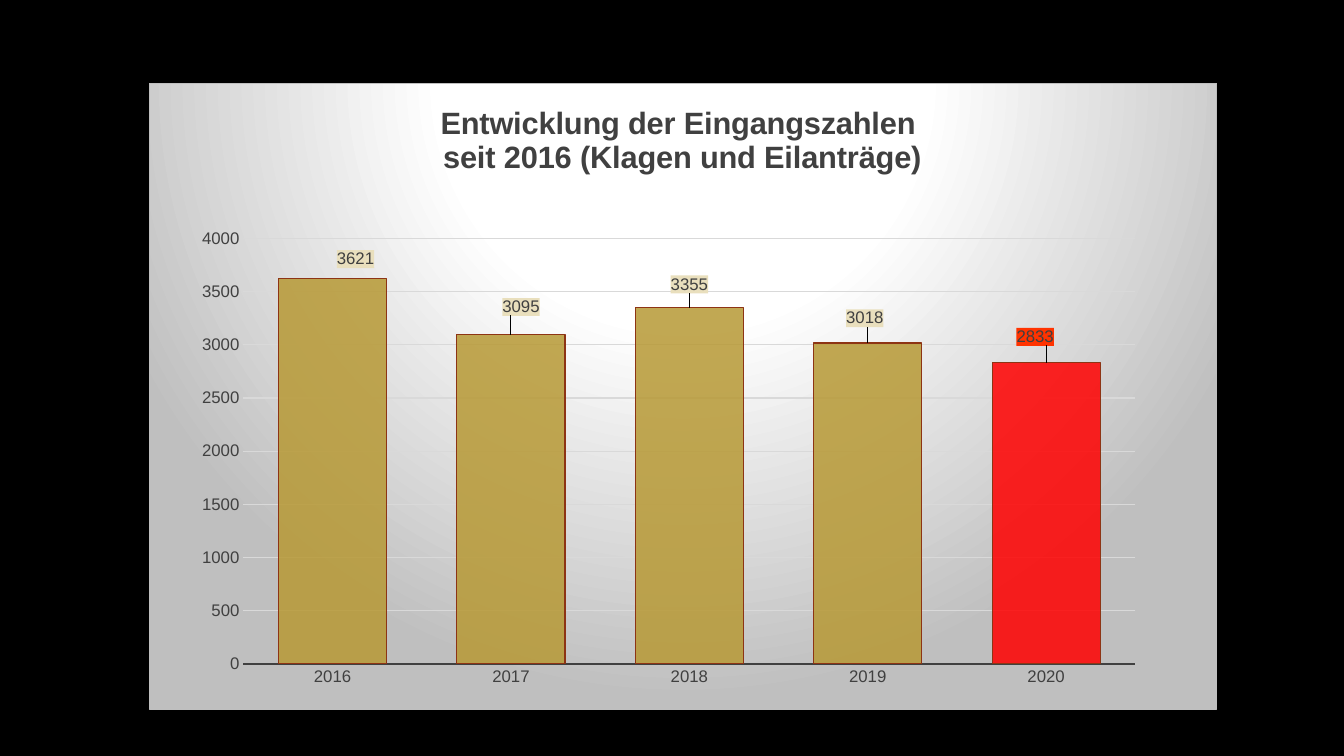
from lxml import etree
from pptx import Presentation
from pptx import util as u
from pptx.chart.data import CategoryChartData
from pptx.dml.color import RGBColor
from pptx.enum import chart as kinds
from pptx.oxml import parse_xml
from pptx.oxml.ns import nsdecls, qn

TITLE = ["Entwicklung der Eingangszahlen ", "seit 2016 (Klagen und Eilanträge)"]
YEARS = ["2016", "2017", "2018", "2019", "2020"]
CASES = [3621, 3095, 3355, 3018, 2833]
LABEL_SHIFTS = [(23, -7), (10, -15), (0, -10), (-3, -12), (-11, -13)]  # px
GOLD, RED, BROWN, DARK = "B79935", "FF0000", "8D3414", "404040"
LABEL_FILLS = ["E9DFBD"] * 4 + ["FF3300"]
GRADIENT = [(0, "FFFFFF"), (39, "FFFFFF"), (100, "BFBFBF")]
LEFT, TOP, WIDTH, HEIGHT = 149, 83, 1068, 627
FONT = "Arial"


def px(length):
    return u.Emu(round(length * 914400 / 100.8))


def colour(value):
    return RGBColor.from_string(value)


def style_font(font, size, value, bold=False):
    font.name, font.size, font.bold = FONT, u.Pt(size), bold
    font.color.rgb = colour(value)


def style_line(line, value, width):
    line.color.rgb = colour(value)
    line.width = u.Pt(width)


def style_bar(bar, value):
    bar.format.fill.solid()
    bar.format.fill.fore_color.rgb = colour(value)
    style_line(bar.format.line, BROWN, 0.75)


def layout(inner=False, **parts):
    root = parse_xml(f"<c:layout {nsdecls('c')}><c:manualLayout/></c:layout>")

    def add(name, value):
        etree.SubElement(root[0], qn("c:" + name)).set("val", str(value))

    if inner:
        add("layoutTarget", "inner")
    if "w" in parts or inner is None:
        add("xMode", "edge")
        add("yMode", "edge")
    for name, value in parts.items():
        add(name, value)
    return root


def shape_properties(content):
    return parse_xml(f"<c:spPr {nsdecls('c', 'a')}>{content}</c:spPr>")


def solid(value):
    return f'<a:solidFill><a:srgbClr val="{value}"/></a:solidFill>'


deck = Presentation()
deck.slide_width, deck.slide_height = px(1344), px(756)
page = deck.slides.add_slide(deck.slide_layouts[6])
page.background.fill.solid()
page.background.fill.fore_color.rgb = colour("000000")

# Column chart
data = CategoryChartData()
data.categories = YEARS
data.add_series("Series 1", CASES)
chart = page.shapes.add_chart(
    kinds.XL_CHART_TYPE.COLUMN_CLUSTERED,
    px(LEFT), px(TOP), px(WIDTH), px(HEIGHT), data).chart
chart.has_legend = False
style_font(chart.font, 10, "FFFFFF")

# Title
chart.has_title = True
frame = chart.chart_title.text_frame
for index, line in enumerate(TITLE):
    para = frame.paragraphs[0] if index == 0 else frame.add_paragraph()
    para.text = line
    style_font(para.font, 22, DARK, bold=True)
title = chart.chart_title._element
for old in title.findall(qn("c:layout")):
    title.remove(old)
title.find(qn("c:tx")).addnext(layout(inner=None, x=0.27, y=0.03))

# Axes
for axis in (chart.category_axis, chart.value_axis):
    axis.major_tick_mark = axis.minor_tick_mark = kinds.XL_TICK_MARK.NONE
    style_font(axis.tick_labels.font, 12, DARK)
style_line(chart.category_axis.format.line, DARK, 1.5)
values = chart.value_axis
values.minimum_scale, values.maximum_scale, values.major_unit = 0, 4000, 500
values.format.line.fill.background()
style_line(values.major_gridlines.format.line, "D9D9D9", 0.75)

# Bars, the latest year in red
plot = chart.plots[0]
plot.gap_width = 65
plot.vary_by_categories = False
series = plot.series[0]
series.invert_if_negative = False
style_bar(series, GOLD)
style_bar(series.points[len(YEARS) - 1], RED)
for fill in series._element.xpath(".//c:spPr/a:solidFill/a:srgbClr"):
    etree.SubElement(fill, qn("a:alpha")).set("val", "85000")

# Value labels, each moved a little and given a background
for index, (shift, fill) in enumerate(zip(LABEL_SHIFTS, LABEL_FILLS)):
    label = series.points[index].data_label
    style_font(label.font, 12, DARK)
    label.position = kinds.XL_LABEL_POSITION.OUTSIDE_END
    node = series._element.xpath(f"c:dLbls/c:dLbl[c:idx/@val='{index}']")[0]
    for old in node.findall(qn("c:spPr")):
        node.remove(old)
    node.insert(1, layout(x=round(shift[0] / WIDTH, 4), y=round(shift[1] / HEIGHT, 4)))
    node.insert(2, shape_properties(solid(fill)))
series.data_labels.show_value = True
style_font(series.data_labels.font, 12, DARK)

# Plot position and chart background
area = chart._chartSpace.chart.plotArea
for old in area.findall(qn("c:layout")):
    area.remove(old)
area.insert(0, layout(inner=True, x=0.088, y=0.248, w=0.836, h=0.679))
stops = "".join(f'<a:gs pos="{place * 1000}"><a:srgbClr val="{value}"/></a:gs>'
                for place, value in GRADIENT)
chart._chartSpace.chart.addnext(shape_properties(
    f'<a:gradFill><a:gsLst>{stops}</a:gsLst><a:path path="circle">'
    '<a:fillToRect l="50000" t="-80000" r="50000" b="180000"/></a:path></a:gradFill>'
    f'<a:ln w="9525">{solid("BFBFBF")}</a:ln>'))

deck.save("out.pptx")
